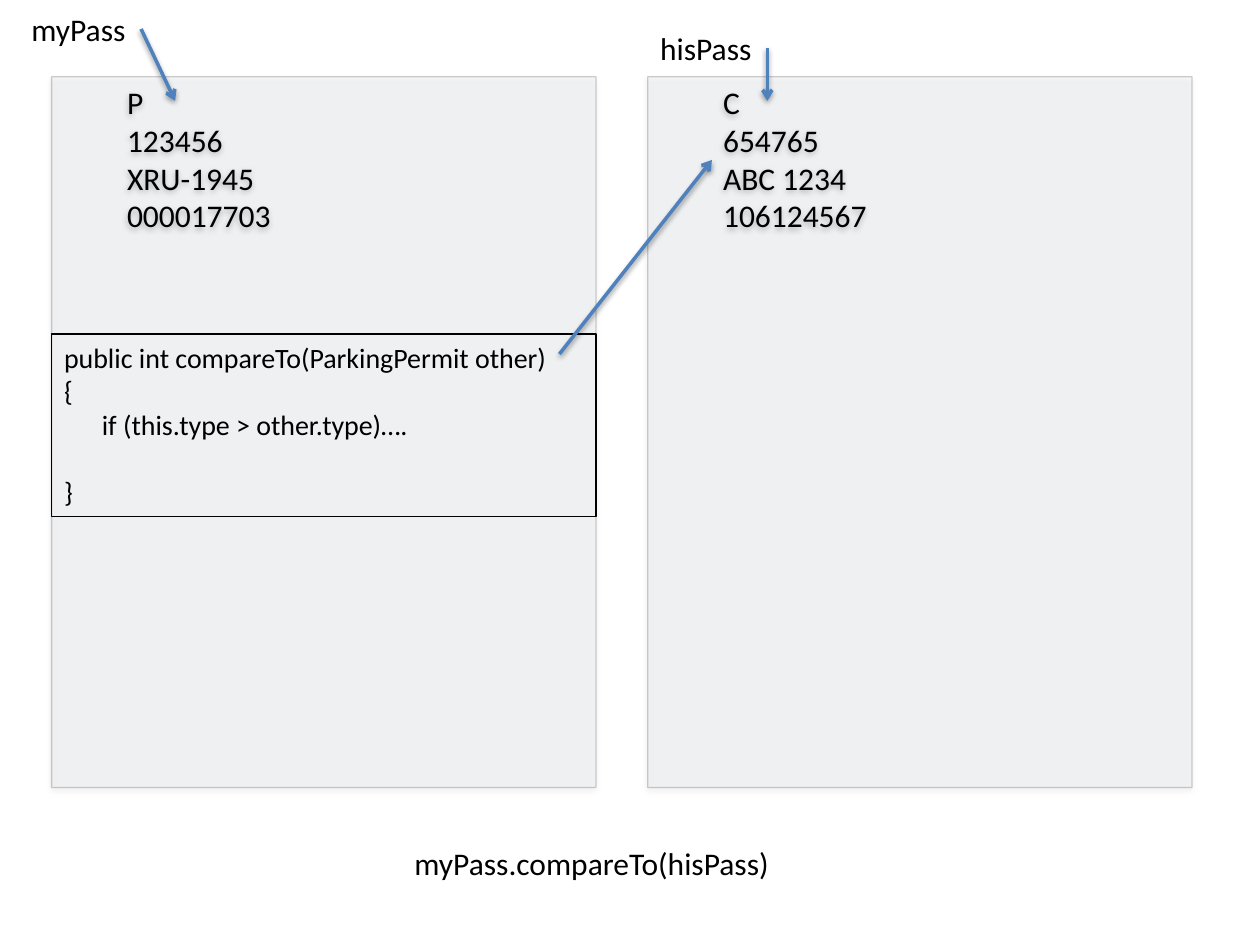
from lxml.etree import SubElement
from pptx import Presentation
from pptx.dml.color import RGBColor
from pptx.enum.shapes import MSO_CONNECTOR, MSO_SHAPE
from pptx.enum.text import MSO_ANCHOR, MSO_AUTO_SIZE, PP_ALIGN
from pptx.oxml.ns import qn
from pptx.util import Inches, Pt

COLORS = {"text": "000000", "panel": "DCE6F2", "arrow": "4F81BD"}
FONT = "Calibri"
RIGHT_SIDE = 3

PANEL_TOP, PANEL_W, PANEL_H = 0.61, 4.32, 5.64
PERMITS = [
    {"name": "myPass", "left": 0.41, "label": (0.15, 0.03, 0.97, 0.4),
     "arrow_end": (1.39, 0.8),
     "fields": ["P", "123456", "XRU-1945", "000017703"]},
    {"name": "hisPass", "left": 5.14, "label": (5.14, 0.18, 0.95, 0.4),
     "arrow_end": (6.09, 0.8),
     "fields": ["C", "654765", "ABC 1234", "106124567"]},
]
METHOD_BOX = (PERMITS[0]["left"], 2.65, PANEL_W, 1.45)
METHOD = ["public int compareTo(ParkingPermit other)", "{",
          "if (this.type > other.type)….", "}"]
OTHER_ARROW = ((4.44, 2.81), (5.65, 1.27))
CALL = ("myPass.compareTo(hisPass)", (3.19, 6.65, 3.09, 0.4))


def rgb(name):
    return RGBColor.from_string(COLORS[name])


def inches(values):
    return [Inches(v) for v in values]


def set_alpha(fill_element, percent):
    color = fill_element.find(qn("a:srgbClr"))
    SubElement(color, qn("a:alpha"), val=str(percent * 1000))


def add_shadow(sp, blur, distance, opacity):
    """Replace the theme effect with a black shadow falling straight down."""
    effects = sp._element.spPr.find(qn("a:effectLst"))
    if effects is None:
        effects = SubElement(sp._element.spPr, qn("a:effectLst"))
    outer = SubElement(effects, qn("a:outerShdw"), blurRad=str(Pt(blur)),
                       dist=str(Pt(distance)), dir="5400000", rotWithShape="0")
    color = SubElement(outer, qn("a:srgbClr"), val=COLORS["text"])
    SubElement(color, qn("a:alpha"), val=str(opacity * 1000))


def write_lines(tf, lines, size, level=0):
    tf.vertical_anchor = MSO_ANCHOR.TOP
    for i, line in enumerate(lines):
        p = tf.paragraphs[0] if i == 0 else tf.add_paragraph()
        p.text = line
        p.level = level
        p.alignment = PP_ALIGN.LEFT
        p.font.name = FONT
        p.font.size = Pt(size)
        p.font.color.rgb = rgb("text")


def add_box(slide, box):
    sp = slide.shapes.add_shape(MSO_SHAPE.RECTANGLE, *inches(box))
    sp.shadow.inherit = False
    sp.fill.background()
    sp.line.color.rgb = rgb("text")
    sp.line.width = Pt(0.75)
    return sp


def add_panel(slide, left, fields):
    sp = add_box(slide, (left, PANEL_TOP, PANEL_W, PANEL_H))
    sp.fill.solid()
    sp.fill.fore_color.rgb = rgb("panel")
    spPr = sp._element.spPr
    set_alpha(spPr.find(qn("a:solidFill")), 15)
    set_alpha(spPr.find(qn("a:ln")).find(qn("a:solidFill")), 18)
    add_shadow(sp, 3.1, 1.8, 35)
    write_lines(sp.text_frame, fields, 18, level=1)


def add_method(slide):
    tf = add_box(slide, METHOD_BOX).text_frame
    write_lines(tf, METHOD, 16)
    body, closing = tf.paragraphs[2:]
    body._p.get_or_add_pPr().set("marL", str(Inches(0.3)))
    closing.space_before = Pt(19.5)


def add_label(slide, text, box):
    sp = slide.shapes.add_textbox(*inches(box))
    sp.text_frame.word_wrap = False
    sp.text_frame.auto_size = MSO_AUTO_SIZE.SHAPE_TO_FIT_TEXT
    write_lines(sp.text_frame, [text], 18)
    return sp


def add_arrow(slide, start, end, source=None):
    """Draw an arrow; a source shape is joined at its right side."""
    line = slide.shapes.add_connector(MSO_CONNECTOR.STRAIGHT, *inches(start + end))
    if source is not None:
        line.begin_connect(source, RIGHT_SIDE)
    line.line.color.rgb = rgb("arrow")
    line.line.width = Pt(2)
    SubElement(line.line._get_or_add_ln(), qn("a:tailEnd"), type="arrow")
    add_shadow(line, 3.1, 1.6, 38)


def main():
    prs = Presentation()
    prs.slide_width, prs.slide_height = Inches(10), Inches(7.5)
    slide = prs.slides.add_slide(prs.slide_layouts[6])

    for permit in PERMITS:
        add_panel(slide, permit["left"], permit["fields"])
    add_method(slide)
    for permit in PERMITS:
        label = add_label(slide, permit["name"], permit["label"])
        left, top, width, height = permit["label"]
        add_arrow(slide, (left + width, top + height / 2), permit["arrow_end"], label)
    add_arrow(slide, *OTHER_ARROW)
    add_label(slide, *CALL)

    prs.save("out.pptx")


if __name__ == "__main__":
    main()
